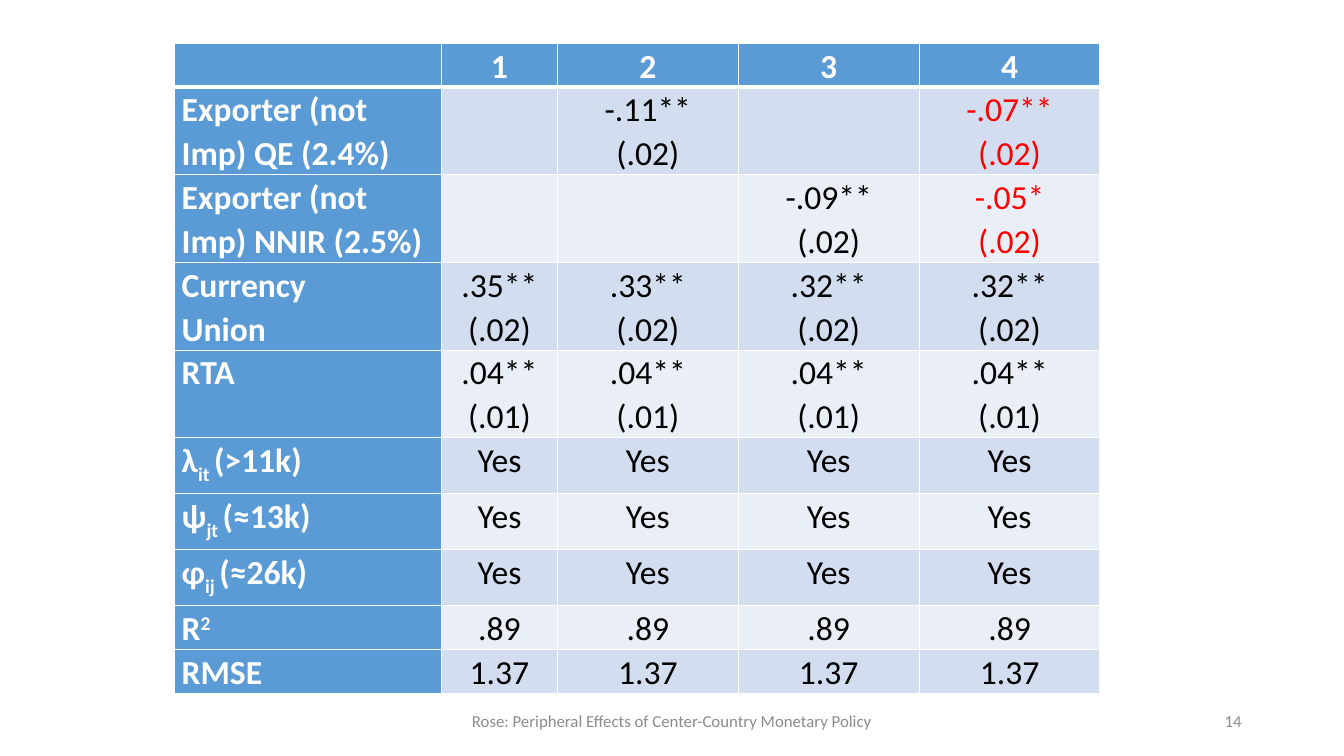
from lxml import etree
from pptx import Presentation
from pptx import util as u
from pptx.dml.color import RGBColor
from pptx.enum import text
from pptx.oxml.ns import qn

COLORS = {
    "header": "5B9BD5", "band_dark": "D2DEEF", "band_light": "EAEFF7",
    "white": "FFFFFF", "black": "000000", "red": "FF0000", "grey": "8C8C8C",
}
ALIGN = text.PP_ALIGN


class RegressionSlide:
    """Holds the style and the current page."""
    font = "Calibri"

    def __init__(self, deck):
        self.page = deck.slides.add_slide(deck.slide_layouts[6])

    def style(self, para, size, color, bold, align):
        para.alignment = align
        para.font.name, para.font.size, para.font.bold = self.font, u.Pt(size), bold
        para.font.color.rgb = RGBColor.from_string(COLORS[color])

    def label(self, left, width, words, align):
        box = self.page.shapes.add_textbox(u.Pt(left), u.Pt(500.4), u.Pt(width), u.Pt(28.8))
        frame = box.text_frame
        frame.word_wrap = True
        frame.vertical_anchor = text.MSO_ANCHOR.MIDDLE
        frame.text = words
        self.style(frame.paragraphs[0], 12, "grey", False, align)

    def border(self, cell, side, width):
        properties = cell._tc.get_or_add_tcPr()
        line = etree.SubElement(properties, qn(f"a:ln{side}"), w=str(u.Pt(width)))
        fill = etree.SubElement(line, qn("a:solidFill"))
        etree.SubElement(fill, qn("a:srgbClr"), val=COLORS["white"])

    def cell(self, cell, content, fill, color, bold, align, top, bottom):
        cell.margin_left = cell.margin_right = u.Pt(5)
        cell.margin_top = cell.margin_bottom = 0
        for side, width in (("L", 1), ("R", 1), ("T", top), ("B", bottom)):
            self.border(cell, side, width)
        cell.fill.solid()
        cell.fill.fore_color.rgb = RGBColor.from_string(COLORS[fill])
        frame = cell.text_frame
        if isinstance(content, str):
            frame.text = content
        else:
            for words, baseline in content:
                span = frame.paragraphs[0].add_run()
                span.text = words
                if baseline:
                    span.font._element.set("baseline", str(baseline * 1000))
        for para in frame.paragraphs:
            self.style(para, 24, color, bold, align)
            para.line_spacing = 1.07

    def table(self, left, top, widths, heights, rows, red_cells):
        frame = self.page.shapes.add_table(
            len(rows), len(widths), u.Pt(left), u.Pt(top), u.Pt(sum(widths)), u.Pt(sum(heights)))
        table = frame.table
        table.first_col = True
        for column, width in zip(table.columns, widths):
            column.width = u.Pt(width)
        for r, (contents, height) in enumerate(zip(rows, heights)):
            table.rows[r].height = u.Pt(height)
            for c, content in enumerate(contents):
                heading = r == 0 or c == 0
                fill = "header" if heading else "band_dark" if r % 2 else "band_light"
                color = "white" if heading else "red" if (r, c) in red_cells else "black"
                self.cell(table.cell(r, c), content, fill, color, heading,
                          ALIGN.CENTER if c else ALIGN.LEFT,
                          top=3 if r == 1 else 1, bottom=3 if r == 0 else 1)


def effect(symbol, index, count):
    return [[(symbol, 0), (index + " ", -25), (count, 0)]] + ["Yes"] * 4


def main():
    deck = Presentation()
    deck.slide_width, deck.slide_height = u.Pt(960), u.Pt(540)
    slide = RegressionSlide(deck)

    # Footer and page number
    slide.label(318, 324, "Rose: Peripheral Effects of Center-Country Monetary Policy", ALIGN.CENTER)
    slide.label(678, 216, "14", ALIGN.RIGHT)

    # Regression results
    rows = [
        ["", "1", "2", "3", "4"],
        ["Exporter (not Imp) QE (2.4%)", "", "-.11**\n(.02)", "", "-.07**\n(.02)"],
        ["Exporter (not Imp) NNIR (2.5%)", "", "", "-.09**\n(.02)", "-.05*\n(.02)"],
        ["Currency\nUnion", ".35**\n(.02)", ".33**\n(.02)", ".32**\n(.02)", ".32**\n(.02)"],
        ["RTA"] + [".04**\n(.01)"] * 4,
        effect("λ", "it", "(>11k)"),
        effect("ψ", "jt", "(≈13k)"),
        effect("φ", "ij", "(≈26k)"),
        [[("R", 0), ("2", 30)]] + [".89"] * 4,
        ["RMSE"] + ["1.37"] * 4,
    ]
    single, double, tall = 31.3, 62.6, 40
    slide.table(
        left=124.8, top=31, widths=[190.6, 82.8] + [129.2] * 3,
        heights=[single] + [double] * 4 + [tall] * 3 + [single] * 2,
        rows=rows, red_cells={(1, 4), (2, 4)})

    deck.save("out.pptx")


if __name__ == "__main__":
    main()
